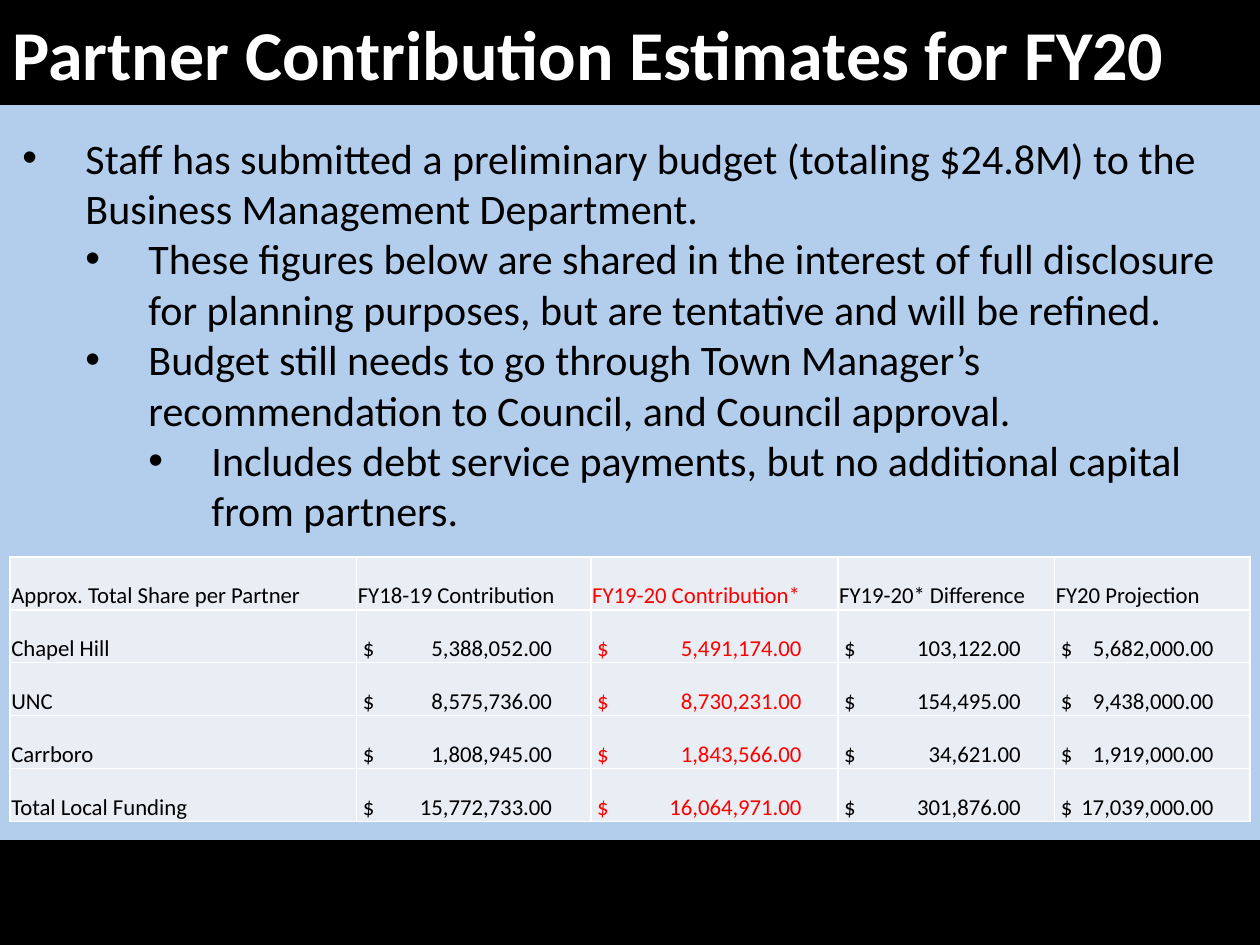
from lxml.etree import SubElement
from pptx import Presentation
from pptx.dml.color import RGBColor
from pptx.enum.shapes import MSO_SHAPE as Shape
from pptx.enum.text import MSO_ANCHOR as Anchor, MSO_AUTO_SIZE as AutoSize, PP_ALIGN as Align
from pptx.oxml.ns import qn
from pptx.util import Inches, Pt

BLACK = RGBColor(0x00, 0x00, 0x00)
WHITE = RGBColor(0xFF, 0xFF, 0xFF)
RED = RGBColor(0xFF, 0x00, 0x00)
PALE_BLUE = RGBColor(0xB3, 0xCD, 0xEC)
CELL_GREY = RGBColor(0xE9, 0xED, 0xF4)

TITLE = "Partner Contribution Estimates for FY20"
BULLETS = [
    (0, "Staff has submitted a preliminary budget (totaling $24.8M) to the "
        "Business Management Department."),
    (1, "These figures below are shared in the interest of full disclosure "
        "for planning purposes, but are tentative and will be refined."),
    (1, "Budget still needs to go through Town Manager’s recommendation to "
        "Council, and Council approval."),
    (2, "Includes debt service payments, but no additional capital from partners."),
]
# Heading, width, right edge of the amounts, text colour
COLUMNS = [
    ("Approx. Total Share per Partner", 2.75, None, BLACK),
    ("FY18-19 Contribution", 1.86, 1.5, BLACK),
    ("FY19-20 Contribution*", 1.96, 1.62, RED),
    ("FY19-20* Difference", 1.72, 1.4, BLACK),
    ("FY20 Projection", 1.55, 1.21, BLACK),
]
PARTNERS = [
    ("Chapel Hill", 5388052, 5491174, 103122, 5682000),
    ("UNC", 8575736, 8730231, 154495, 9438000),
    ("Carrboro", 1808945, 1843566, 34621, 1919000),
    ("Total Local Funding", 15772733, 16064971, 301876, 17039000),
]
BAR_HEIGHT = 0.83
ROW_HEIGHT = 0.42
INDENT = 0.5


def add_bar(page, top):
    bar = page.shapes.add_shape(Shape.RECTANGLE, 0, Inches(top), Inches(10), Inches(BAR_HEIGHT))
    bar.shadow.inherit = False
    bar.fill.solid()
    bar.fill.fore_color.rgb = BLACK
    bar.line.color.rgb = BLACK
    bar.line.width = Pt(0.75)
    return bar


def add_text(para, text, color, **font):
    span = para.add_run()
    span.text = text
    for name, value in {"name": "Calibri", **font}.items():
        setattr(span.font, name, value)
    span.font.color.rgb = color


def add_bullets(page):
    box = page.shapes.add_textbox(Inches(0.08), Inches(1), Inches(9.92), Inches(3.74))
    frame = box.text_frame
    frame.word_wrap = True
    frame.auto_size = AutoSize.SHAPE_TO_FIT_TEXT
    for number, (level, text) in enumerate(BULLETS):
        para = frame.add_paragraph() if number else frame.paragraphs[0]
        para.level = level
        props = para._p.get_or_add_pPr()
        props.set("marL", str(Inches(INDENT * (level + 1))))
        props.set("indent", str(-Inches(INDENT)))
        SubElement(props, qn("a:buFont"), typeface="Arial")
        SubElement(props, qn("a:buChar"), char="•")
        add_text(para, text, BLACK, size=Pt(24))


def format_cell(cell):
    props = cell._tc.get_or_add_tcPr()
    for side in ("lnL", "lnR", "lnT", "lnB"):
        line = SubElement(props, qn(f"a:{side}"), w=str(Pt(1)))
        fill = SubElement(line, qn("a:solidFill"))
        SubElement(fill, qn("a:srgbClr"), val=str(WHITE))
    cell.fill.solid()
    cell.fill.fore_color.rgb = CELL_GREY
    cell.vertical_anchor = Anchor.BOTTOM
    cell.margin_left = cell.margin_right = cell.margin_top = Inches(0.01)
    cell.margin_bottom = 0


def add_amount_tab(cell, position):
    """Set a right tab stop so the amounts line up apart from the dollar sign."""
    cell.margin_left = Inches(0.05)
    props = cell.text_frame.paragraphs[0]._p.get_or_add_pPr()
    stops = SubElement(props, qn("a:tabLst"))
    SubElement(stops, qn("a:tab"), pos=str(Inches(position)), algn="r")


def add_funding_table(page):
    rows = [[column[0] for column in COLUMNS], *PARTNERS]
    width = sum(column[1] for column in COLUMNS)
    table = page.shapes.add_table(
        len(rows), len(COLUMNS), Inches(0.08), Inches(4.42),
        Inches(width), Inches(ROW_HEIGHT * len(rows))).table
    for column, (_, column_width, _, _) in zip(table.columns, COLUMNS):
        column.width = Inches(column_width)
    for row, values in zip(table.rows, rows):
        row.height = Inches(ROW_HEIGHT)
        for cell, value, (_, _, tab, color) in zip(row.cells, values, COLUMNS):
            format_cell(cell)
            if isinstance(value, int):
                add_amount_tab(cell, tab)
                value = f"$\t{value:,.2f}"
            add_text(cell.text_frame.paragraphs[0], value, color, size=Pt(13), bold=False)


def main():
    deck = Presentation()
    deck.slide_width, deck.slide_height = Inches(10), Inches(7.5)
    page = deck.slides.add_slide(deck.slide_layouts[6])
    page.background.fill.solid()
    page.background.fill.fore_color.rgb = PALE_BLUE

    add_bar(page, 7.5 - BAR_HEIGHT)
    title = add_bar(page, 0).text_frame
    title.word_wrap = True
    title.vertical_anchor = Anchor.MIDDLE
    title.paragraphs[0].alignment = Align.LEFT
    add_text(title.paragraphs[0], TITLE, WHITE, size=Pt(40), bold=True)

    add_bullets(page)
    add_funding_table(page)
    deck.save("out.pptx")


if __name__ == "__main__":
    main()
